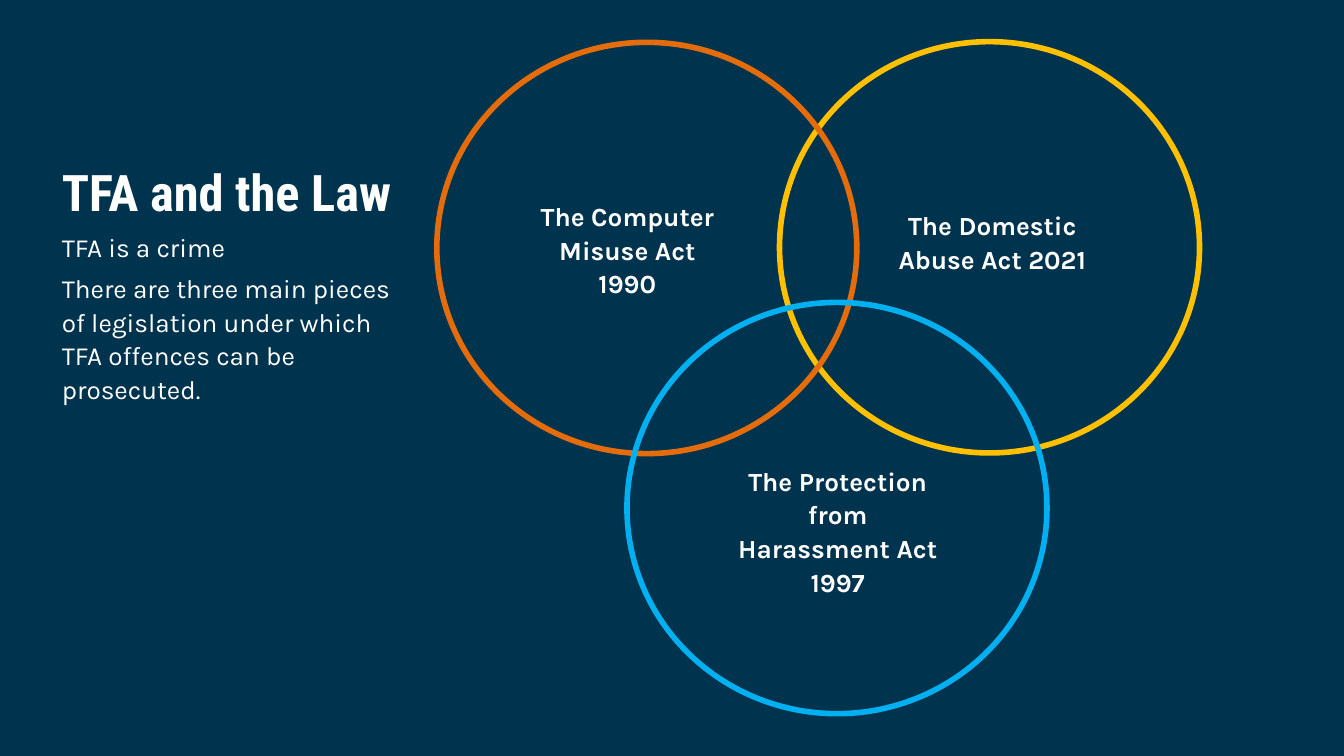
from pptx import Presentation
from pptx.dml.color import RGBColor
from pptx.enum.shapes import MSO_SHAPE
from pptx.enum.text import MSO_ANCHOR, MSO_AUTO_SIZE, PP_ALIGN
from pptx.util import Inches, Pt

NAVY = RGBColor(0x00, 0x33, 0x4E)
WHITE = RGBColor(0xFF, 0xFF, 0xFF)
YELLOW = RGBColor(0xFF, 0xC0, 0x00)
ORANGE = RGBColor(0xE4, 0x6C, 0x0A)
BLUE = RGBColor(0x00, 0xB0, 0xF0)

TITLE = "TFA and the Law"
BODY = [
    "TFA is a crime",
    "There are three main pieces of legislation under which TFA offences can be prosecuted.",
]
# act, circle colour, circle left and top, label left, top and height
ACTS = [
    ("The Domestic Abuse Act 2021", YELLOW, (11.6, 0.62), (13.18, 3.04, 1.54)),
    ("The Computer Misuse Act 1990", ORANGE, (6.5, 0.63), (7.75, 2.9, 1.6)),
    ("The Protection from Harassment Act 1997", BLUE, (9.33, 4.5), (10.88, 6.84, 2.55)),
]
CIRCLE_W, CIRCLE_H = 6.25, 6.12
LABEL_W = 3.17


def place(sp, left, top, width, height):
    sp.left, sp.top, sp.width, sp.height = map(Inches, (left, top, width, height))


def write(sp, lines, font="Karla", size=28, bold=False, align=PP_ALIGN.LEFT):
    """Fill a shape with white paragraphs, one per line, without bullets."""
    tf = sp.text_frame
    tf.word_wrap = True
    tf.auto_size = MSO_AUTO_SIZE.NONE
    tf.vertical_anchor = MSO_ANCHOR.TOP
    tf.text = "\n".join(lines)
    for p in tf.paragraphs:
        pPr = p._p.get_or_add_pPr()
        pPr.set("marL", "0")
        pPr.set("indent", "0")
        pPr.insert(0, pPr.makeelement(
            "{http://schemas.openxmlformats.org/drawingml/2006/main}buNone", {}))
        p.alignment = align
        p.line_spacing = 1.07
        p.space_before = Pt(0)
        p.space_after = Pt(8)
        p.font.name = font
        p.font.size = Pt(size)
        p.font.bold = bold
        p.font.color.rgb = WHITE


prs = Presentation()
prs.slide_width, prs.slide_height = Inches(20), Inches(11.25)
s = prs.slides.add_slide(prs.slide_layouts[1])
s.background.fill.solid()
s.background.fill.fore_color.rgb = NAVY

title, body = s.placeholders
place(title, 0.82, 2.29, 5.43, 1.07)
write(title, [TITLE], "Roboto Condensed", 54, True)
place(body, 0.82, 3.36, 5.43, 6.1)
write(body, BODY)

for _, color, (left, top), _ in ACTS:
    circle = s.shapes.add_shape(MSO_SHAPE.OVAL, Inches(left), Inches(top),
                                Inches(CIRCLE_W), Inches(CIRCLE_H))
    circle.shadow.inherit = False
    circle.fill.background()
    circle.line.color.rgb = color
    circle.line.width = Pt(6)

for act, _, _, (left, top, height) in ACTS:
    label = s.shapes.add_textbox(Inches(left), Inches(top), Inches(LABEL_W), Inches(height))
    write(label, [act], bold=True, align=PP_ALIGN.CENTER)

prs.save("out.pptx")
